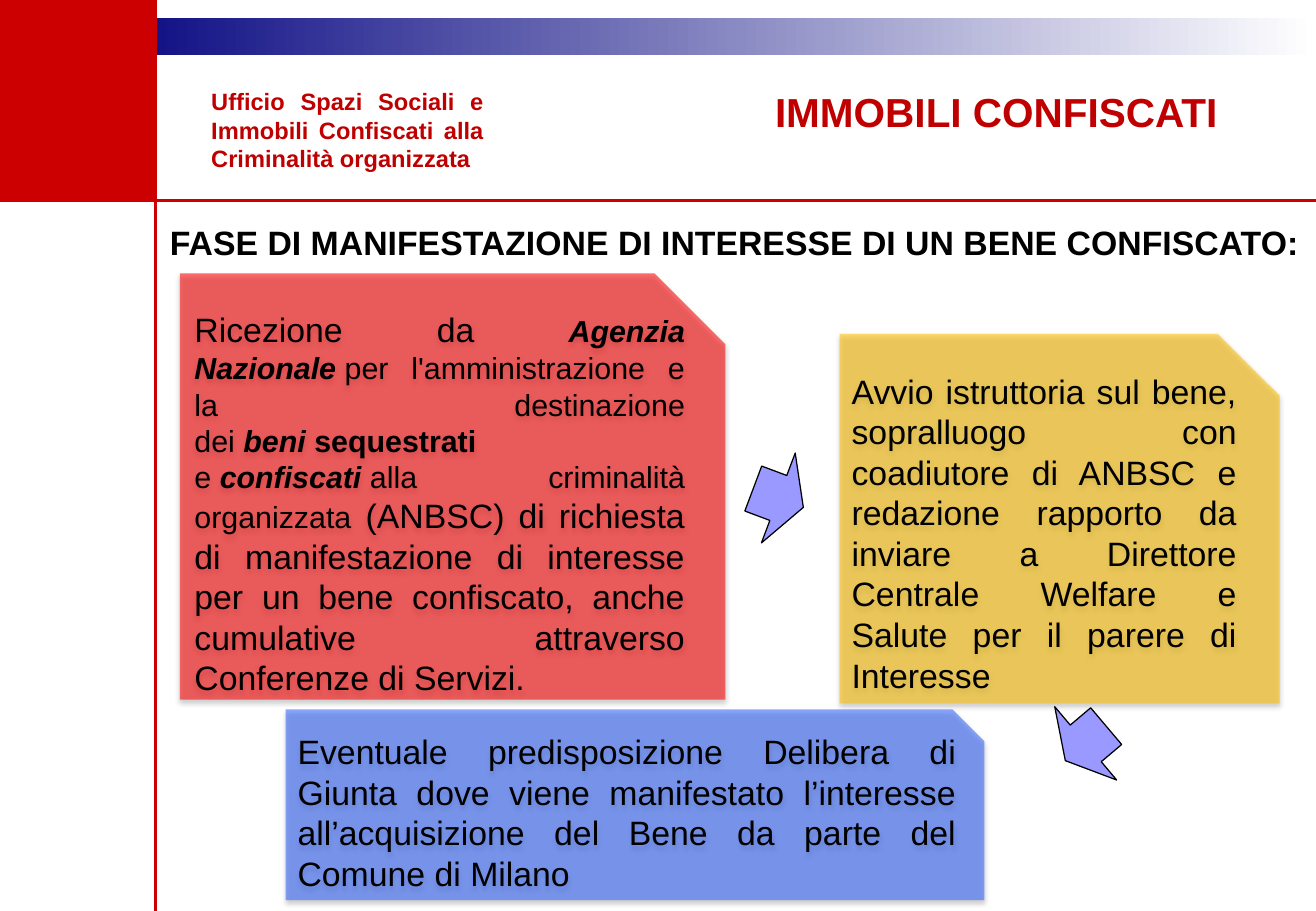
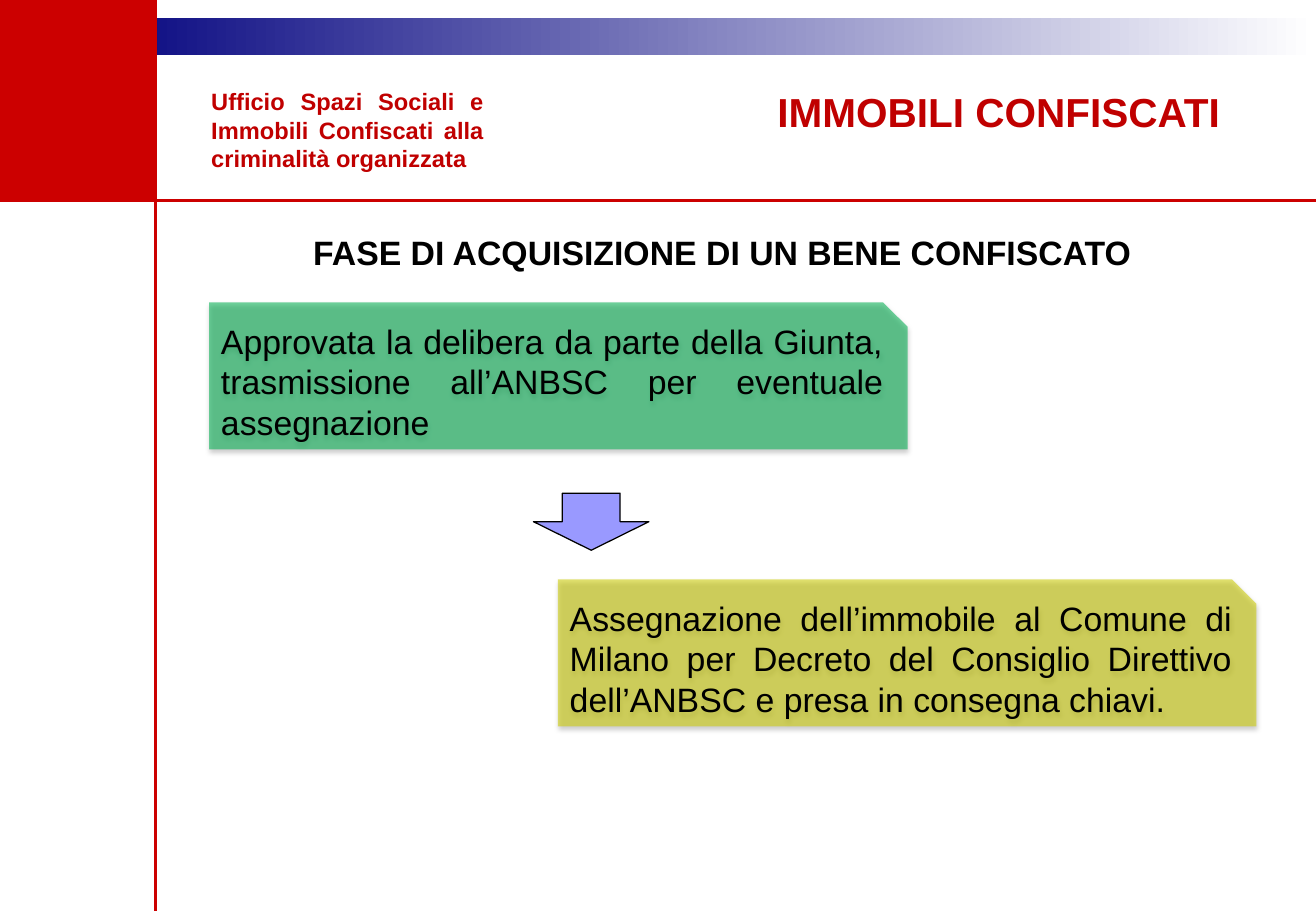
from lxml import etree
from pptx import Presentation, util as u
from pptx.dml.color import RGBColor
from pptx.enum import shapes, text
from pptx.oxml.ns import qn

SCALE = u.Inches(1) // 100
KIND = shapes.MSO_SHAPE
ALIGN = text.PP_ALIGN
TIE = chr(160)


def px(n):
    return u.Emu(n * SCALE)


def hue(code):
    return RGBColor.from_string(code)


def sub(node, tag, **attrs):
    return etree.SubElement(node, qn(tag), attrs)


class Deck:
    FONT = "Arial"
    RED = "CC0000"
    TITLE = "C00000"
    INK = "000000"
    ARROW = "9999FF"
    WIDE, HIGH = 1083, 750
    SIDE, HEAD = 128, 165

    def __init__(self):
        self.prs = Presentation()
        self.prs.slide_width = px(self.WIDE)
        self.prs.slide_height = px(self.HIGH)
        self.page = None

    def shape(self, kind, box, fill=None):
        item = self.page.shapes.add_shape(kind, *map(px, box))
        item.shadow.inherit = False
        item.line.fill.background()
        if fill:
            item.fill.solid()
            item.fill.fore_color.rgb = hue(fill)
        return item

    def line(self, *ends):
        rule = self.page.shapes.add_connector(
            shapes.MSO_CONNECTOR.STRAIGHT, *map(px, ends))
        rule.line.color.rgb = hue(self.RED)
        rule.line.width = u.Pt(1.5)
        sub(rule.element.spPr, "a:effectLst")

    def style(self, run, size, color, bold=False, slant=False):
        run.font.name = self.FONT
        run.font.size = u.Pt(size)
        run.font.color.rgb = hue(color)
        run.font.bold = bold
        run.font.italic = slant

    def label(self, words, box, size, color, align=ALIGN.LEFT):
        frame = self.page.shapes.add_textbox(*map(px, box)).text_frame
        frame.word_wrap = True
        frame.text = words
        para = frame.paragraphs[0]
        para.alignment = align
        self.style(para.runs[0], size, color, True)

    def card(self, box, fill, parts, left=10, top=5, right=10):
        item = self.shape(KIND.SNIP_1_RECTANGLE, box, fill)
        props = item.element.spPr
        tint = props.find(qn("a:solidFill"))[0]
        sub(tint, "a:alpha", val="56000")
        glow = sub(props.find(qn("a:effectLst")), "a:outerShdw",
                   blurRad=str(u.Pt(3.1)), dist=str(u.Pt(1.8)),
                   dir="5400000", rotWithShape="0")
        shade = sub(glow, "a:srgbClr", val=self.INK)
        sub(shade, "a:alpha", val="35000")
        frame = item.text_frame
        frame.word_wrap = True
        frame.vertical_anchor = text.MSO_ANCHOR.TOP
        frame.margin_left, frame.margin_right = px(left), px(right)
        frame.margin_top = frame.margin_bottom = px(top)
        para = frame.paragraphs[0]
        para.alignment = ALIGN.JUSTIFY
        for words, size, bold, slant in parts:
            run = para.add_run()
            run.text = words.replace("~", TIE)
            self.style(run, size, self.INK, bold, slant)

    def plain(self, box, fill, words):
        self.card(box, fill, [(words, 20, False, False)])

    def arrow(self, box, turn):
        item = self.shape(KIND.UP_ARROW, box, self.ARROW)
        item.rotation = turn
        item.line.color.rgb = hue(self.INK)
        item.line.width = u.Pt(0.75)

    def start(self, office, left):
        self.page = self.prs.slides.add_slide(self.prs.slide_layouts[6])
        band = self.shape(KIND.RECTANGLE, (49, 15, self.WIDE - 49, 30))
        band.fill.gradient()
        band.fill.gradient_angle = 0
        for stop, code in zip(band.fill.gradient_stops, ("00007D", "FFFFFF")):
            stop.color.rgb = hue(code)
        self.shape(KIND.RECTANGLE, (0, 0, self.SIDE, self.HEAD), self.RED)
        self.line(0, self.HEAD, self.WIDE, self.HEAD)
        self.line(self.SIDE, self.HIGH, self.SIDE, 0)
        self.label(office, (164, 67, 244, 81), 14, self.TITLE, ALIGN.JUSTIFY)
        self.label("IMMOBILI CONFISCATI", (left, 67, 390, 51), 24, self.TITLE)

    def phase(self, words, box, align=ALIGN.LEFT):
        self.label(words, box, 20, self.INK, align)


def interest(deck):
    deck.start("Ufficio Spazi Sociali e Immobili Confiscati alla "
               "Criminalità organizzata", 628)
    deck.phase("FASE DI MANIFESTAZIONE DI INTERESSE DI UN BENE CONFISCATO:",
               (130, 178, 951, 44))
    deck.card((148, 225, 449, 351), "FF0000", [
        ("Ricezione da ", 20, False, False),
        ("Agenzia Nazionale", 18, True, True),
        ("~per l'amministrazione e la destinazione dei~", 18, False, False),
        ("beni~", 18, True, True),
        ("sequestrati", 18, True, False),
        (" e~", 18, False, False),
        ("confiscati", 18, True, True),
        ("~alla criminalità organizzata", 18, False, False),
        (" (ANBSC) di richiesta di manifestazione di interesse per un bene "
         "confiscato, anche cumulative attraverso Conferenze di Servizi.",
         20, False, False),
    ], left=12, top=0, right=4)
    deck.plain((691, 275, 362, 304), "FFC000",
               "Avvio istruttoria sul bene, sopralluogo con coadiutore di ANBSC "
               "e redazione rapporto da inviare a Direttore Centrale Welfare e "
               "Salute per il parere di Interesse")
    deck.plain((235, 584, 575, 157), "3366FF",
               "Eventuale predisposizione Delibera di Giunta dove viene "
               "manifestato l’interesse all’acquisizione del Bene da parte del "
               "Comune di Milano")
    deck.arrow((601, 388, 79, 44), 110.6)
    deck.arrow((854, 590, 79, 44), 229.8)


def award(deck):
    deck.start("Ufficio Spazi Sociali e Immobili Confiscati alla "
               "criminalità organizzata", 630)
    deck.phase("FASE DI ACQUISIZIONE DI UN BENE CONFISCATO",
               (140, 186, 909, 44), ALIGN.CENTER)
    deck.plain((172, 249, 575, 121), "00B050",
               "Approvata la delibera da parte della Giunta, trasmissione "
               "all’ANBSC per eventuale assegnazione")
    deck.plain((459, 477, 575, 121), "CCCC00",
               "Assegnazione dell’immobile al Comune di Milano per Decreto del "
               "Consiglio Direttivo dell’ANBSC e presa in consegna chiavi.")
    deck.arrow((439, 406, 95, 47), 180)


def main():
    deck = Deck()
    interest(deck)
    award(deck)
    deck.prs.save("out.pptx")


if __name__ == "__main__":
    main()
